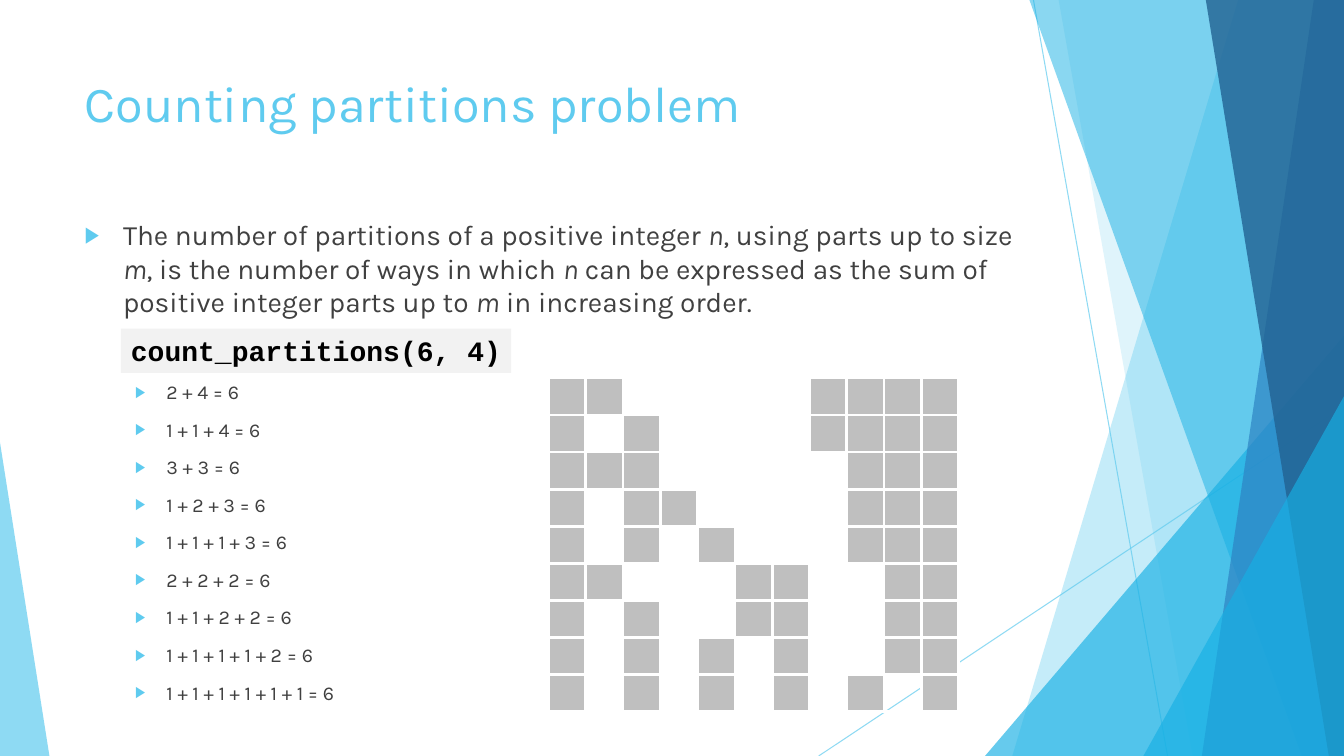
from dataclasses import dataclass

import lxml.etree
import pptx
import pptx.dml.color
import pptx.enum.shapes
import pptx.enum.text
import pptx.oxml.ns
import pptx.slide
import pptx.util

PX = 9144  # EMU per px, 100 px to the inch
W, H = 1333, 750
FONT, CODE_FONT = "Karla", "Courier New"
COLORS = {
    "sky": "5FCBEF", "cyan": "17B0E4", "blue": "2E83C3", "navy": "226292",
    "text": "404040", "code": "000000", "panel": "F2F2F2",
    "cell": "BFBFBF", "border": "FFFFFF",
}
qn = pptx.oxml.ns.qn


@dataclass
class Ray:
    start: tuple[int, int]
    end: tuple[int, int]


@dataclass
class Facet:
    """Band from a top edge to a bottom edge, reaching the right slide edge."""
    top_left: int
    bottom_left: int
    color: str
    alpha: int


@dataclass
class Wedge:
    left: int
    top: int
    width: int
    apex: int
    color: str
    alpha: int


RAYS = [Ray((1025, 0), (1158, H)), Ray((W, 403), (812, H))]
DECOR = [
    Facet(1228, 1004, "sky", 36),
    Facet(1050, 1183, "sky", 20),
    Wedge(977, 333, 356, 1, "cyan", 66),
    Facet(1021, 1291, "cyan", 50),
    Facet(1303, 1192, "blue", 70),
    Facet(1196, 1318, "navy", 80),
    Wedge(1134, 393, 199, 1, "cyan", 66),
    Wedge(0, 439, 49, 0, "sky", 70),
]

# Text between asterisks is italic
DEFINITION = ("The number of partitions of a positive integer *n*, using parts up to size "
              "*m*, is the number of ways in which *n* can be expressed as the sum of "
              "positive integer parts up to *m* in increasing order.")
PARTITIONS = [
    [2, 4], [1, 1, 4], [3, 3], [1, 2, 3], [1, 1, 1, 3],
    [2, 2, 2], [1, 1, 2, 2], [1, 1, 1, 1, 2], [1, 1, 1, 1, 1, 1],
]
GRID = [
    "##.....####",
    "#.#....####",
    "###.....###",
    "#.##....###",
    "#.#.#...###",
    "##...##..##",
    "#.#..##..##",
    "#.#.#.#..##",
    "#.#.#.#.#.#",
]


def px(n: int) -> pptx.util.Emu:
    return pptx.util.Emu(n * PX)


def rgb(name: str) -> pptx.dml.color.RGBColor:
    return pptx.dml.color.RGBColor.from_string(COLORS[name])


def add_xml(parent, tag: str, **attrs: str):
    return lxml.etree.SubElement(parent, qn(tag), attrs)


def set_alpha(shape, percent: int) -> None:
    color = shape._element.spPr.find(".//" + qn("a:srgbClr"))
    add_xml(color, "a:alpha", val=str(percent * 1000))


def add_run(p, text: str, size: int, color: str, font: str = FONT,
            bold: bool = False, italic: bool = False) -> None:
    r = p.add_run()
    r.text = text
    r.font.name, r.font.size = font, pptx.util.Pt(size)
    r.font.bold, r.font.italic = bold, italic
    r.font.color.rgb = rgb(color)


def draw_ray(s: pptx.slide.Slide, ray: Ray) -> None:
    c = s.shapes.add_connector(pptx.enum.shapes.MSO_CONNECTOR.STRAIGHT,
                               *map(px, ray.start + ray.end))
    c.line.color.rgb = rgb("sky")
    c.line.width = pptx.util.Pt(0.75)
    set_alpha(c, 70)
    add_xml(c._element.spPr, "a:effectLst")


def draw_decor(s: pptx.slide.Slide, item: Facet | Wedge) -> None:
    if isinstance(item, Facet):
        builder = s.shapes.build_freeform(item.top_left, 0, scale=PX)
        builder.add_line_segments([(W, 0), (W, H), (item.bottom_left, H)], close=True)
        sp = builder.convert_to_shape()
    else:
        sp = s.shapes.add_shape(
            pptx.enum.shapes.MSO_SHAPE.ISOSCELES_TRIANGLE,
            px(item.left), px(item.top), px(item.width), px(H - item.top))
        sp.adjustments[0] = item.apex
    sp.shadow.inherit = False
    sp.fill.solid()
    sp.fill.fore_color.rgb = rgb(item.color)
    sp.line.fill.background()
    set_alpha(sp, item.alpha)


def place(sp, left: int, top: int, width: int, height: int) -> None:
    sp.left, sp.top, sp.width, sp.height = map(px, (left, top, width, height))


def format_bullet(p, level: int, indent: int, hang: int, before: int) -> None:
    p.level = level
    p.alignment = pptx.enum.text.PP_ALIGN.LEFT
    p.space_before = pptx.util.Pt(before)
    pPr = p._p.get_or_add_pPr()
    pPr.set("marL", str(px(indent)))
    pPr.set("indent", str(px(-hang)))
    add_xml(add_xml(pPr, "a:buClr"), "a:srgbClr", val=COLORS["sky"])
    add_xml(pPr, "a:buSzPct", val="80000")
    add_xml(pPr, "a:buChar", char="▶")


def draw_grid(s: pptx.slide.Slide, left: int, top: int, width: int, height: int) -> None:
    table = s.shapes.add_table(len(GRID), len(GRID[0]), px(left), px(top),
                               px(width), px(height)).table
    table.first_row = table.horz_banding = False
    for i, row in enumerate(GRID):
        for j, mark in enumerate(row):
            cell = table.cell(i, j)
            cell.margin_left = cell.margin_right = cell.margin_top = cell.margin_bottom = 0
            tcPr = cell._tc.get_or_add_tcPr()
            for side in ("a:lnL", "a:lnR", "a:lnT", "a:lnB"):
                ln = add_xml(tcPr, side, w=str(pptx.util.Pt(2.25)))
                add_xml(add_xml(ln, "a:solidFill"), "a:srgbClr", val=COLORS["border"])
            if mark == "#":
                cell.fill.solid()
                cell.fill.fore_color.rgb = rgb("cell")
            else:
                cell.fill.background()


def main() -> None:
    prs = pptx.Presentation()
    prs.slide_width, prs.slide_height = px(W), px(H)
    s = prs.slides.add_slide(prs.slide_layouts[1])
    title, body = s.shapes.title, s.placeholders[1]

    # Background facets, behind the placeholders
    for ray in RAYS:
        draw_ray(s, ray)
    for item in DECOR:
        draw_decor(s, item)
    for sp in (title, body):
        s.shapes._spTree.append(sp._element)
        sp.text_frame.word_wrap = True
        sp.text_frame.auto_size = pptx.enum.text.MSO_AUTO_SIZE.NONE
        sp.text_frame.vertical_anchor = pptx.enum.text.MSO_ANCHOR.TOP

    # Title
    place(title, 74, 67, 940, 144)
    p = title.text_frame.paragraphs[0]
    p.alignment = pptx.enum.text.PP_ALIGN.LEFT
    add_run(p, "Counting partitions problem", 36, "sky")

    # Definition and list of partitions
    place(body, 74, 211, 940, 523)
    tf = body.text_frame
    tf.margin_right = 0
    p = tf.paragraphs[0]
    format_bullet(p, 0, 38, 38, 10)
    for i, part in enumerate(DEFINITION.split("*")):
        add_run(p, part, 20, "text", italic=i % 2 == 1)
    for i, parts in enumerate(PARTITIONS):
        p = tf.add_paragraph()
        format_bullet(p, 1, 81, 31, 10 if i else 44)
        add_run(p, f"{' + '.join(map(str, parts))} = {sum(parts)}", 14, "text")

    # Function call, kept on one line
    sp = s.shapes.add_shape(pptx.enum.shapes.MSO_SHAPE.RECTANGLE,
                            px(120), px(326), px(387), px(44))
    sp.shadow.inherit = False
    sp.fill.solid()
    sp.fill.fore_color.rgb = rgb("panel")
    sp.line.fill.background()
    sp.text_frame.margin_right = 0
    p = sp.text_frame.paragraphs[0]
    p.alignment = pptx.enum.text.PP_ALIGN.LEFT
    add_run(p, "count_partitions(6, 4)", 20, "code", CODE_FONT, bold=True)

    # Tree of partitions as cells
    draw_grid(s, 544, 375, 407, 331)
    prs.save("out.pptx")


if __name__ == "__main__":
    main()
